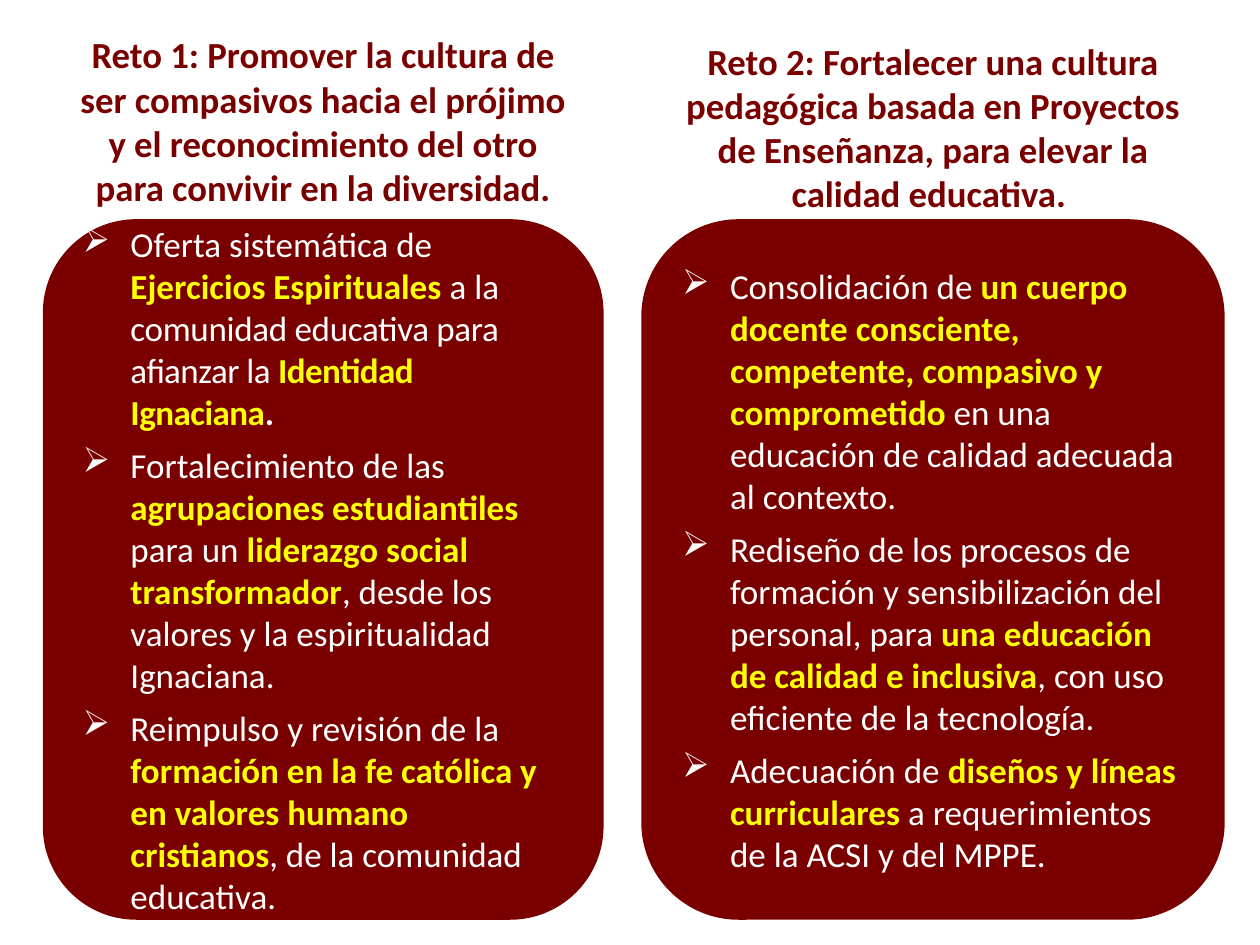
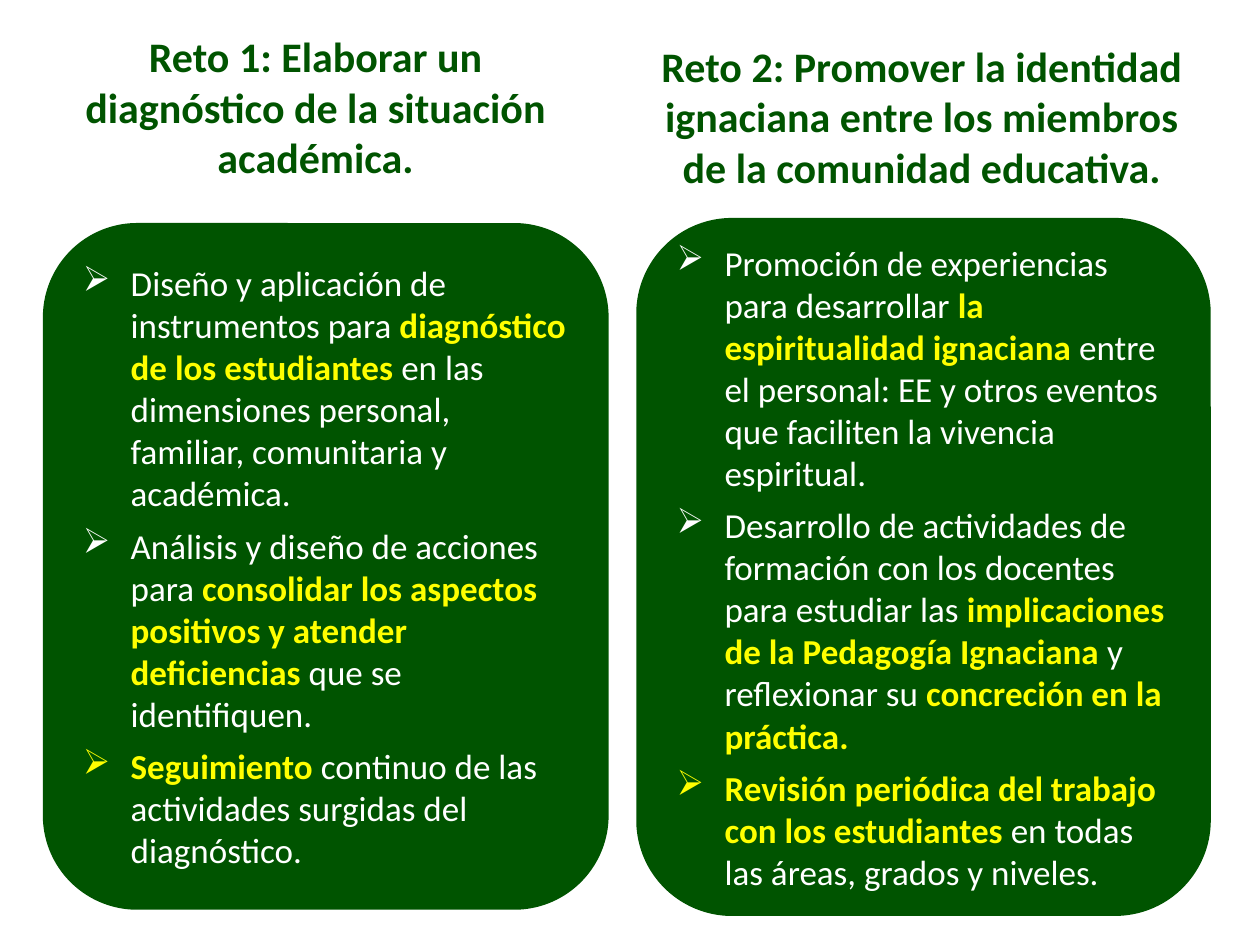
from typing import NamedTuple

from lxml.etree import SubElement
from pptx import Presentation
from pptx.dml.color import RGBColor
from pptx.enum.shapes import MSO_SHAPE
from pptx.enum.text import MSO_ANCHOR, PP_ALIGN
from pptx.oxml.ns import qn
from pptx.util import Inches, Pt

MAROON = RGBColor(0x7A, 0x00, 0x00)
GREEN = RGBColor(0x00, 0x54, 0x00)
WHITE = RGBColor(0xFF, 0xFF, 0xFF)
YELLOW = RGBColor(0xFF, 0xFF, 0x00)
FONT = "Calibri"
ACTION_SIZE = 20
BULLET = "➢"
BULLET_INDENT = Inches(0.38)


class Part(NamedTuple):
    text: str
    color: RGBColor = WHITE
    bold: bool = False
    spacing: float = 0


def key(text, spacing=0):
    return Part(text, YELLOW, True, spacing)


# Content: each challenge has a heading, its actions, and the two boxes
# as (left, top, width, height) in inches
SLIDES = [
    {"color": MAROON, "heading_size": 21, "challenges": [
        {"heading": "Reto 1: Promover la cultura de ser compasivos hacia el prójimo "
                    "y el reconocimiento del otro para convivir en la diversidad.",
         "heading_box": (0.48, 0.33, 4.17, 1.25),
         "panel_box": (0.34, 1.74, 4.45, 5.56),
         "actions": [
             [Part("Oferta sistemática de "), key("Ejercicios Espirituales "),
              Part("a la "), Part("comunidad educativa para ", spacing=-0.2),
              Part("afianzar la ", spacing=-0.3), key("Identidad Ignaciana", -0.3),
              Part(".", bold=True, spacing=-0.3)],
             [Part("Fortalecimiento de las "), key("agrupaciones estudiantiles "),
              Part("para un "), key("liderazgo social transformador"),
              Part(", desde los valores y la espiritualidad Ignaciana.")],
             [Part("Reimpulso y revisión de la "),
              key("formación en la fe católica y en valores humano cristianos"),
              Part(", de la comunidad educativa.")],
         ]},
        {"heading": "Reto 2: Fortalecer una cultura pedagógica basada en Proyectos "
                    "de Enseñanza, para elevar la calidad educativa. ",
         "heading_box": (5.32, 0.38, 4.17, 1.25),
         "panel_box": (5.09, 1.74, 4.63, 5.56),
         "actions": [
             [Part("Consolidación de "),
              key("un cuerpo docente consciente, competente, compasivo y comprometido"),
              Part(" en una educación de calidad adecuada al contexto.")],
             [Part("Rediseño de los procesos de formación y sensibilización "
                   "del personal, para "),
              key("una educación de calidad e inclusiva"),
              Part(", con uso eficiente de la tecnología.")],
             [Part("Adecuación de "), key("diseños y líneas curriculares "),
              Part("a requerimientos de la ACSI y del MPPE.")],
         ]},
    ]},
    {"color": GREEN, "heading_size": 24, "challenges": [
        {"heading": "Reto 1: Elaborar un diagnóstico de la situación académica.",
         "heading_box": (0.34, 0.37, 4.33, 0.95),
         "panel_box": (0.34, 1.77, 4.49, 5.45),
         "actions": [
             [Part("Diseño y aplicación de instrumentos para "),
              key("diagnóstico de los estudiantes "),
              Part("en las dimensiones personal, familiar, comunitaria y académica.")],
             [Part("Análisis y diseño de acciones para "),
              key("consolidar los aspectos positivos y atender deficiencias "),
              Part("que se identifiquen.")],
             [key("Seguimiento "),
              Part("continuo de las actividades surgidas del diagnóstico.")],
         ]},
        {"heading": "Reto 2: Promover la identidad ignaciana entre los miembros "
                    "de la comunidad educativa.",
         "heading_box": (5.02, 0.37, 4.59, 1.1),
         "panel_box": (5.05, 1.73, 4.56, 5.54),
         "actions": [
             [Part("Promoción de experiencias para desarrollar "),
              key("la espiritualidad ignaciana"),
              Part(" entre el personal: EE y otros eventos que faciliten "
                   "la vivencia espiritual.")],
             [Part("Desarrollo de actividades de formación con los docentes "
                   "para estudiar las "),
              key("implicaciones de la Pedagogía Ignaciana "),
              Part("y reflexionar su "), key("concreción en la práctica.")],
             [key("Revisión periódica del trabajo con los estudiantes "),
              Part("en todas las áreas, grados y niveles.")],
         ]},
    ]},
]


def prepare_text(shape):
    frame = shape.text_frame
    frame.word_wrap = True
    frame.vertical_anchor = MSO_ANCHOR.MIDDLE
    return frame


def set_font(paragraph, size):
    paragraph.font.name = FONT
    paragraph.font.size = Pt(size)


def add_bullet(paragraph):
    properties = paragraph._p.get_or_add_pPr()
    properties.set("marL", str(BULLET_INDENT))
    properties.set("indent", str(-BULLET_INDENT))
    SubElement(properties, qn("a:buChar")).set("char", BULLET)


def add_action(paragraph, parts):
    paragraph.alignment = PP_ALIGN.LEFT
    paragraph.space_before = paragraph.space_after = Pt(3)
    add_bullet(paragraph)
    set_font(paragraph, ACTION_SIZE)
    for part in parts:
        run = paragraph.add_run()
        run.text = part.text
        run.font.color.rgb = part.color
        run.font.bold = part.bold
        if part.spacing:
            run.font._element.set("spc", str(round(part.spacing * 100)))


def add_panel(slide, box, color, actions):
    panel = slide.shapes.add_shape(MSO_SHAPE.ROUNDED_RECTANGLE, *map(Inches, box))
    panel.shadow.inherit = False
    panel.fill.solid()
    panel.fill.fore_color.rgb = color
    panel.line.fill.background()
    frame = prepare_text(panel)
    for number, parts in enumerate(actions):
        add_action(frame.add_paragraph() if number else frame.paragraphs[0], parts)


def add_heading(slide, box, color, size, text):
    heading = slide.shapes.add_textbox(*map(Inches, box))
    paragraph = prepare_text(heading).paragraphs[0]
    paragraph.text = text
    paragraph.alignment = PP_ALIGN.CENTER
    set_font(paragraph, size)
    paragraph.font.bold = True
    paragraph.font.color.rgb = color


def main():
    deck = Presentation()
    deck.slide_width, deck.slide_height = Inches(10), Inches(7.5)
    blank = deck.slide_layouts[6]
    for content in SLIDES:
        slide = deck.slides.add_slide(blank)
        color = content["color"]
        # Panels first, then the headings above them
        for challenge in content["challenges"]:
            add_panel(slide, challenge["panel_box"], color, challenge["actions"])
        for challenge in content["challenges"]:
            add_heading(slide, challenge["heading_box"], color,
                        content["heading_size"], challenge["heading"])
    deck.save("out.pptx")


if __name__ == "__main__":
    main()
